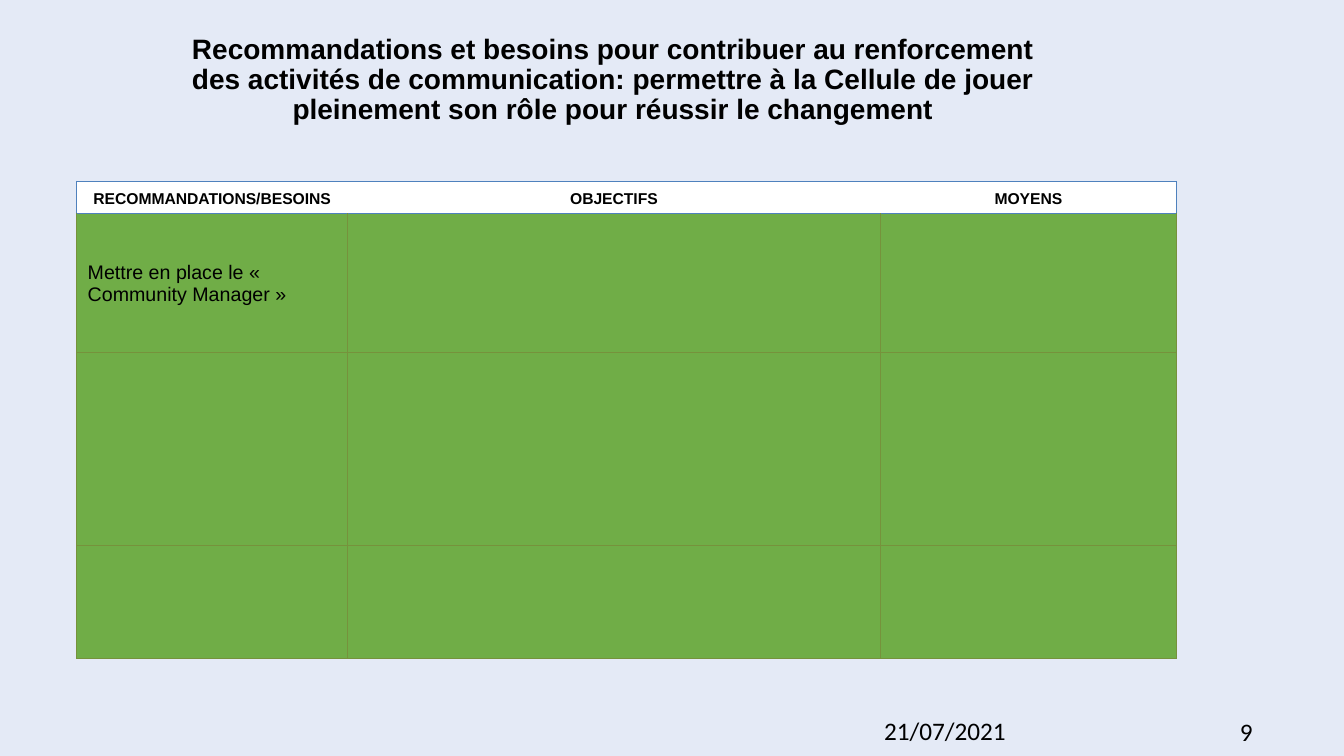
from dataclasses import dataclass

from lxml import etree
from pptx import Presentation
from pptx.dml.color import RGBColor
from pptx.enum.text import MSO_ANCHOR, PP_ALIGN
from pptx.oxml.ns import qn
from pptx.slide import Slide
from pptx.table import _Cell
from pptx.text.text import TextFrame
from pptx.util import Inches, Pt

LEFT, CENTER = PP_ALIGN.LEFT, PP_ALIGN.CENTER
TOP, MIDDLE = MSO_ANCHOR.TOP, MSO_ANCHOR.MIDDLE


@dataclass(frozen=True)
class Theme:
    background: str = "E4EAF6"
    text: str = "000000"
    header_fill: str = "FFFFFF"
    body_fill: str = "70AD47"
    header_border: str = "4F81BD"
    body_border: str = "76923C"
    heading_font: str = "Arial"
    footer_font: str = "Calibri"
    title_size: int = 20
    footer_size: int = 18
    table_size: int = 14
    border_width: int = 1


THEME = Theme()


@dataclass(frozen=True)
class Label:
    text: str
    box: tuple[float, float, float, float]
    font: str = THEME.footer_font
    size: int = THEME.footer_size
    bold: bool = False
    align: PP_ALIGN = LEFT
    anchor: MSO_ANCHOR = TOP
    line_spacing: float = 1.0


LABELS = (
    Label("21/07/2021", (8.67, 7.05, 3, 0.4)),
    Label("9", (12.2, 7.06, 1.1, 0.4)),
    Label(
        "Recommandations et besoins pour contribuer au renforcement des activités de "
        "communication: permettre à la Cellule de jouer pleinement son rôle pour "
        "réussir le changement",
        (1.58, 0.32, 9, 0.96),
        THEME.heading_font, THEME.title_size, True, CENTER, MIDDLE, 0.9,
    ),
)

TABLE_BOX = (0.76, 1.8, 10.91, 4.73)
COLUMN_WIDTHS = (2.69, 5.28, 2.94)
ROW_HEIGHTS = (0.32, 1.38, 1.91, 1.12)
TABLE_ROWS = (
    ("recommandations/besoins", "objectifs", "moyens"),
    ("Mettre en place le « Community Manager »", "", ""),
    ("", "", ""),
    ("", "", ""),
)
CELL_MARGINS = {
    "margin_left": Inches(0.11),
    "margin_top": Inches(0.01),
    "margin_right": Inches(0.11),
    "margin_bottom": Inches(0),
}


def write_text(frame: TextFrame, label: Label, small_caps: bool = False) -> None:
    para = frame.paragraphs[0]
    para.alignment = label.align
    para.line_spacing = label.line_spacing
    span = para.add_run()
    span.text = label.text
    formats = {"name": label.font, "size": Pt(label.size), "bold": label.bold}
    for name, value in formats.items():
        setattr(span.font, name, value)
    span.font.color.rgb = RGBColor.from_string(THEME.text)
    if small_caps:
        span._r.get_or_add_rPr().set("cap", "small")


def draw_label(page: Slide, label: Label) -> None:
    box = page.shapes.add_textbox(*map(Inches, label.box))
    box.text_frame.word_wrap = True
    box.text_frame.vertical_anchor = label.anchor
    write_text(box.text_frame, label)


def set_borders(cell: _Cell, colors: dict[str, str]) -> None:
    properties = cell._tc.get_or_add_tcPr()
    for side in "LRTB":
        line = etree.SubElement(properties, qn(f"a:ln{side}"))
        if side in colors:
            line.set("w", str(Pt(THEME.border_width)))
            fill = etree.SubElement(line, qn("a:solidFill"))
            etree.SubElement(fill, qn("a:srgbClr"), val=colors[side])
        else:
            etree.SubElement(line, qn("a:noFill"))


def border_colors(row: int, column: int) -> dict[str, str]:
    if row == 0:
        outer = {0: "L", len(COLUMN_WIDTHS) - 1: "R"}.get(column, "")
        return dict.fromkeys("TB" + outer, THEME.header_border)
    colors = dict.fromkeys("LRTB", THEME.body_border)
    if row == 1:
        colors["T"] = THEME.header_border
    return colors


def draw_cell(cell: _Cell, row: int, column: int, text: str) -> None:
    header = row == 0
    set_borders(cell, border_colors(row, column))
    cell.fill.solid()
    fill = THEME.header_fill if header else THEME.body_fill
    cell.fill.fore_color.rgb = RGBColor.from_string(fill)
    if text:
        for name, value in CELL_MARGINS.items():
            setattr(cell, name, value)
        cell.vertical_anchor = MIDDLE
        label = Label(text, TABLE_BOX, THEME.heading_font, THEME.table_size,
                      header, CENTER if header else LEFT)
        write_text(cell.text_frame, label, small_caps=header)


def draw_table(page: Slide) -> None:
    table = page.shapes.add_table(
        len(ROW_HEIGHTS), len(COLUMN_WIDTHS), *map(Inches, TABLE_BOX)
    ).table
    table.first_row = False
    table.horz_banding = False
    for column, width in zip(table.columns, COLUMN_WIDTHS):
        column.width = Inches(width)
    for row, height in zip(table.rows, ROW_HEIGHTS):
        row.height = Inches(height)
    for row, texts in enumerate(TABLE_ROWS):
        for column, text in enumerate(texts):
            draw_cell(table.cell(row, column), row, column, text)


def main() -> None:
    deck = Presentation()
    deck.slide_width, deck.slide_height = Inches(13.33), Inches(7.5)
    page = deck.slides.add_slide(deck.slide_layouts[6])
    page.background.fill.solid()
    page.background.fill.fore_color.rgb = RGBColor.from_string(THEME.background)
    for label in LABELS:
        draw_label(page, label)
    draw_table(page)
    deck.save("out.pptx")


if __name__ == "__main__":
    main()
